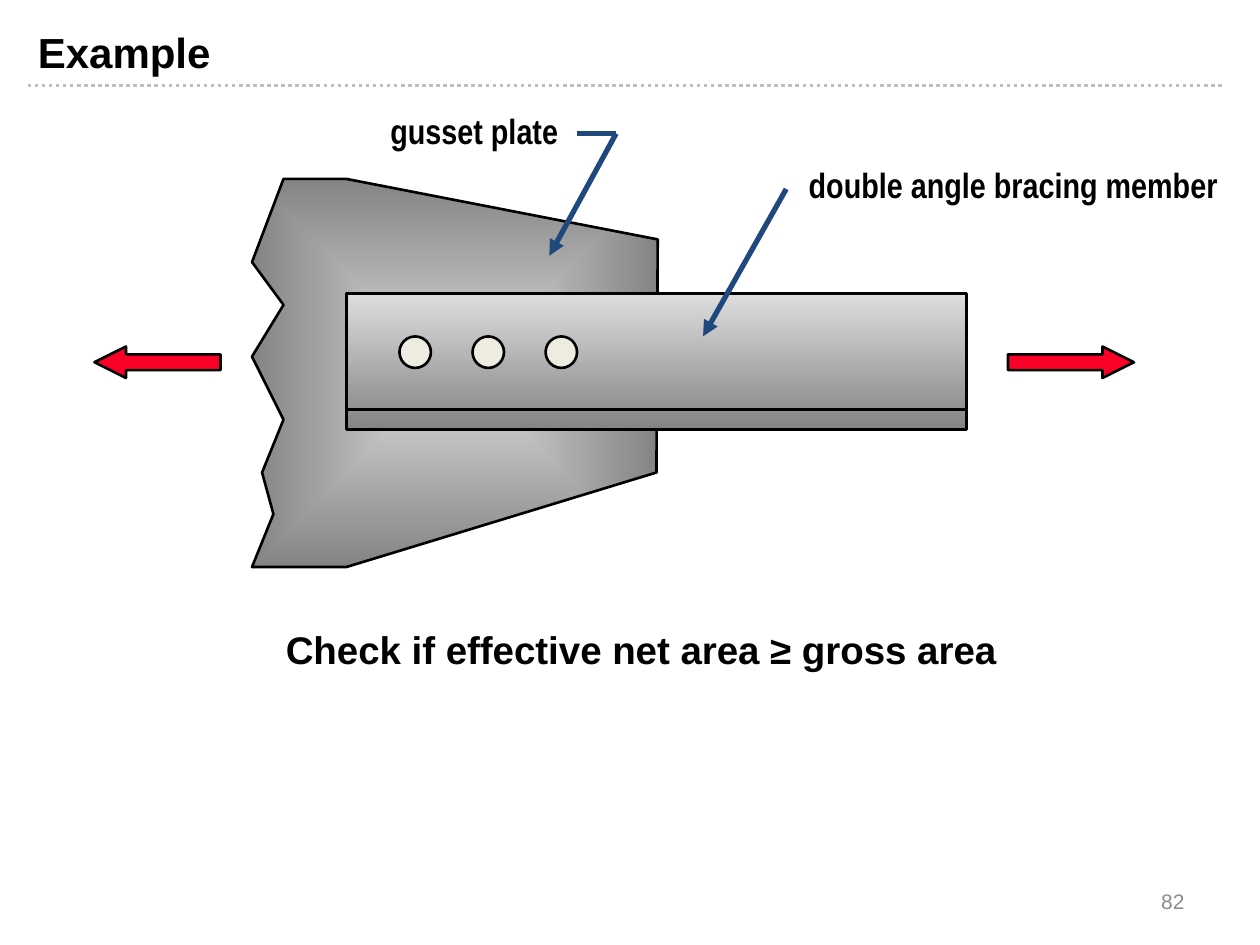
from lxml import etree
from pptx import Presentation
from pptx.dml.color import RGBColor
from pptx.enum.dml import MSO_LINE
from pptx.enum.shapes import MSO_CONNECTOR, MSO_SHAPE
from pptx.enum.text import MSO_ANCHOR, PP_ALIGN
from pptx.oxml import parse_xml
from pptx.oxml.ns import nsdecls, qn
from pptx.util import Inches, Pt

BLACK, RED, BLUE, CREAM = "000000", "FC0128", "1F497D", "EEECE1"
STEEL = ("DDDDDD", "848484")

TITLE = ("Example", (0.2, 0.16, 8.98, 0.44), 24)
LABELS = [  # text, box, size, font
    ("double angle bracing member", (6.32, 1.25, 3.67, 0.43), 20, "Arial Narrow"),
    ("gusset plate", (3, 0.82, 1.67, 0.43), 20, "Arial Narrow"),
    ("Check if effective net area ≥ gross area", (2.17, 4.92, 6.33, 0.47), 22, "Arial"),
]
PAGE_NUMBER = ("82", (7.17, 6.95, 2.33, 0.4), 12, "Arial")

GUSSET_OUTLINE = [
    (2.75, 1.42), (5.22, 1.9), (5.21, 3.75), (2.75, 4.5), (2, 4.5), (2.17, 4.08),
    (2.08, 3.75), (2.25, 3.33), (2, 2.83), (2.25, 2.42), (2, 2.08), (2.25, 1.42),
]
MEMBER_BOX = (2.75, 2.33, 4.92, 1.08)
ANGLE_LEG_Y = 3.25
BOLT_LEFT, BOLT_TOP, BOLT_SIZE, BOLT_PITCH, BOLT_COUNT = 3.17, 2.67, 0.25, 0.58, 3
FORCES = [
    (MSO_SHAPE.RIGHT_ARROW, (8, 2.75, 1, 0.25)),
    (MSO_SHAPE.LEFT_ARROW, (0.75, 2.75, 1, 0.25)),
]
LEADERS = [  # start, end, has arrowhead
    ((6.24, 1.5), (5.58, 2.67), True),
    ((4.89, 1.06), (4.36, 2.03), True),
    ((4.89, 1.06), (4.58, 1.06), False),
]


def rgb(value):
    return RGBColor.from_string(value)


def inches(values):
    return [Inches(value) for value in values]


def outline(shape, color=BLACK, width=1.5):
    shape.line.color.rgb = rgb(color)
    shape.line.width = Pt(width)


def fill_steel(shape, from_center=False):
    """Shade light to dark, either downwards or outwards from the centre."""
    shape.fill.gradient()
    shape.fill.gradient_angle = 270
    for stop, color in zip(shape.fill.gradient_stops, STEEL):
        stop.color.rgb = rgb(color)
    if from_center:
        linear = shape._element.spPr.find(qn("a:gradFill")).find(qn("a:lin"))
        linear.getparent().replace(linear, parse_xml(
            f'<a:path {nsdecls("a")} path="rect">'
            '<a:fillToRect l="50000" t="50000" r="50000" b="50000"/></a:path>'))


def add_outlined_shape(shapes, kind, box, color=None):
    shape = shapes.add_shape(kind, *inches(box))
    shape.shadow.inherit = False
    outline(shape)
    if color:
        shape.fill.solid()
        shape.fill.fore_color.rgb = rgb(color)
    return shape


def add_line(shapes, start, end, color, width, arrow=False):
    line = shapes.add_connector(MSO_CONNECTOR.STRAIGHT, *inches(start + end))
    outline(line, color, width)
    if arrow:
        etree.SubElement(line.line._get_or_add_ln(), qn("a:tailEnd"), type="triangle")
    etree.SubElement(line._element.spPr, qn("a:effectLst"))
    return line


def write(shape, text, size, font="Arial", color=BLACK, bold=True,
          align=PP_ALIGN.LEFT, anchor=MSO_ANCHOR.TOP):
    frame = shape.text_frame
    frame.word_wrap = True
    frame.vertical_anchor = anchor
    paragraph = frame.paragraphs[0]
    paragraph.alignment = align
    run = paragraph.add_run()
    run.text = text
    run.font.name = font
    run.font.size = Pt(size)
    run.font.bold = bold
    run.font.color.rgb = rgb(color)


def add_label(shapes, text, box, size, font, **style):
    write(shapes.add_textbox(*inches(box)), text, size, font, **style)


def add_connection(shapes):
    """Group the gusset plate, the bracing member and its bolts."""
    parts = shapes.add_group_shape().shapes
    points = [tuple(inches(point)) for point in GUSSET_OUTLINE]
    builder = parts.build_freeform(*points[0])
    builder.add_line_segments(points[1:], close=True)
    gusset = builder.convert_to_shape()
    gusset.shadow.inherit = False
    outline(gusset)
    fill_steel(gusset, from_center=True)

    fill_steel(add_outlined_shape(parts, MSO_SHAPE.RECTANGLE, MEMBER_BOX))
    left, _, width, _ = MEMBER_BOX
    add_line(parts, (left, ANGLE_LEG_Y), (left + width, ANGLE_LEG_Y), BLACK, 2.25)
    for index in range(BOLT_COUNT):
        box = (BOLT_LEFT + index * BOLT_PITCH, BOLT_TOP, BOLT_SIZE, BOLT_SIZE)
        add_outlined_shape(parts, MSO_SHAPE.OVAL, box, CREAM)


def main():
    presentation = Presentation()
    presentation.slide_width, presentation.slide_height = inches((10, 7.5))
    slide = presentation.slides.add_slide(presentation.slide_layouts[5])
    shapes = slide.shapes

    text, box, size = TITLE
    title = shapes.title
    title.left, title.top, title.width, title.height = inches(box)
    write(title, text, size)
    rule = add_line(shapes, (0.22, 0.68), (9.72, 0.68), "BFBFBF", 2)
    rule.line.dash_style = MSO_LINE.ROUND_DOT

    for kind, box in FORCES:
        arrow = add_outlined_shape(shapes, kind, box, RED)
        arrow.adjustments[0], arrow.adjustments[1] = 0.5, 1
    add_connection(shapes)
    for start, end, arrow in LEADERS:
        add_line(shapes, start, end, BLUE, 3, arrow)
    for label in LABELS:
        add_label(shapes, *label)
    add_label(shapes, *PAGE_NUMBER, color="8C8C8C", bold=False,
              align=PP_ALIGN.RIGHT, anchor=MSO_ANCHOR.MIDDLE)

    presentation.save("out.pptx")


if __name__ == "__main__":
    main()
